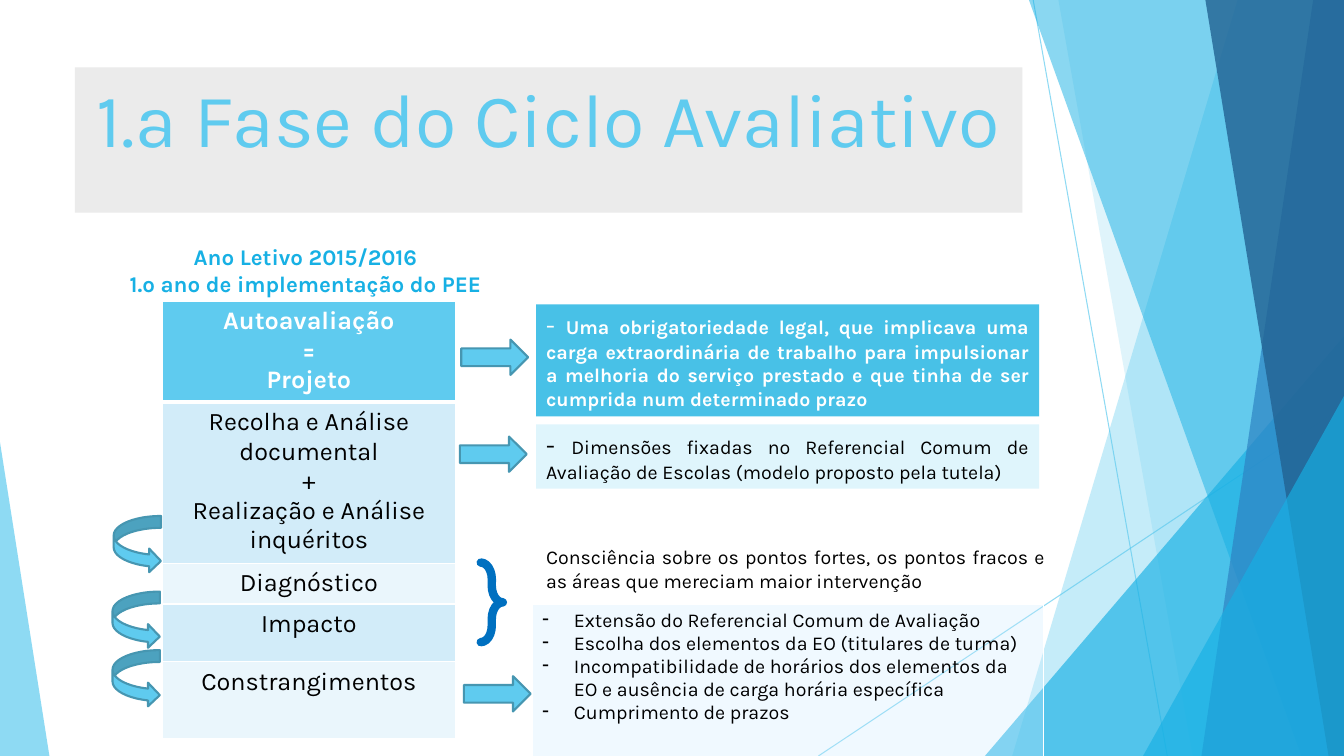
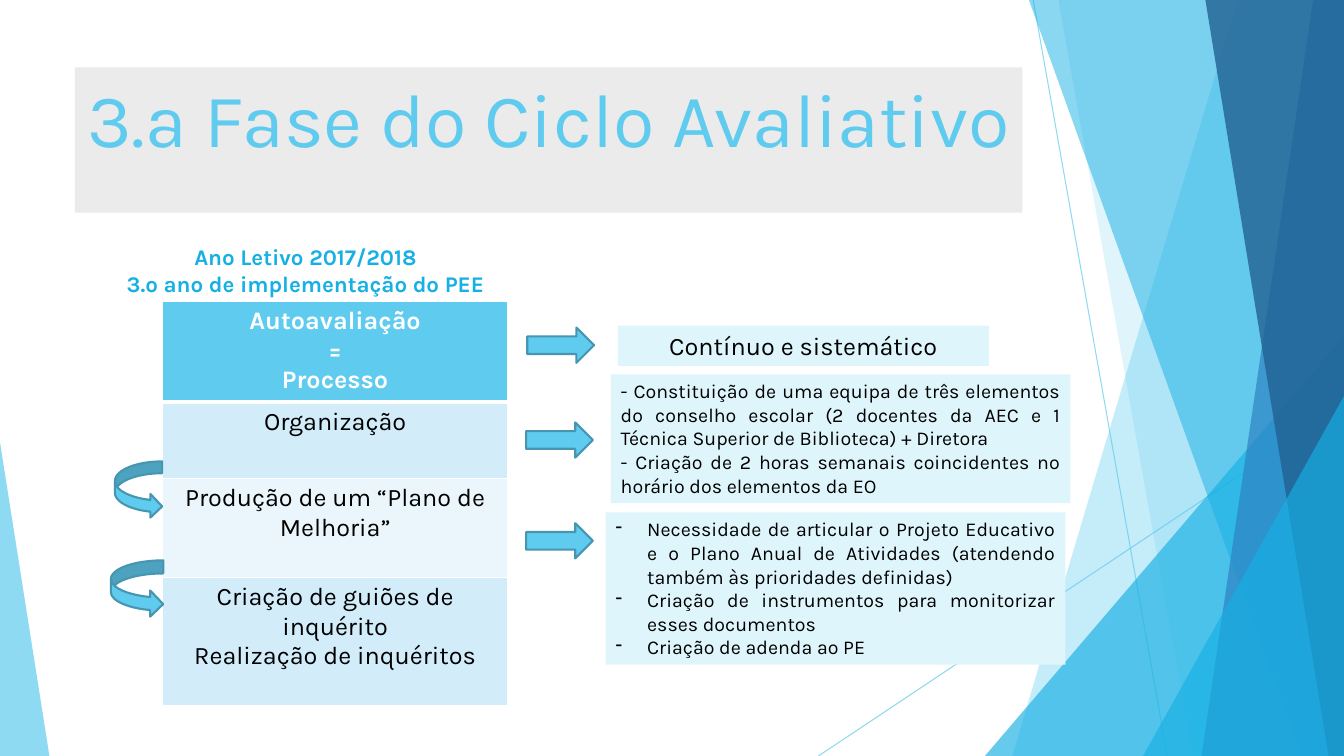
"""Build two slides on the phases of a school evaluation cycle."""
from lxml import etree
from pptx import Presentation
from pptx.dml.color import RGBColor
from pptx.enum.shapes import MSO_CONNECTOR, MSO_SHAPE
from pptx.enum.text import MSO_ANCHOR, PP_ALIGN
from pptx.oxml.ns import qn
from pptx.util import Pt

RECT, TRI = MSO_SHAPE.RECTANGLE, MSO_SHAPE.ISOSCELES_TRIANGLE
ARROW, CURVE = MSO_SHAPE.RIGHT_ARROW, MSO_SHAPE.CURVED_RIGHT_ARROW
BRACE, LINE = MSO_SHAPE.RIGHT_BRACE, MSO_CONNECTOR.STRAIGHT
LEFT, MID, FULL = PP_ALIGN.LEFT, PP_ALIGN.CENTER, PP_ALIGN.JUSTIFY
TOP, LOW = MSO_ANCHOR.TOP, MSO_ANCHOR.BOTTOM

FONT = "Karla"
WIDE, HIGH = 960, 540
SKY, BLUE, EDGE = "5FCBEF", "17B0E4", "4696B1"
PALE, GRAY, WHITE, BLACK = "DFF5FC", "EBEBEB", "FFFFFF", "000000"
BANDS = ["D2ECF9", "EAF6FC"]
INDENT = 22.5

RAYS = [(738, 0, 833.8, HIGH), (WIDE, 290, 584.6, HIGH)]
SHARDS = [
    ("quad", (884, 723), SKY, 36),
    ("quad", (756, 852), SKY, 20),
    ("tri", (703.5, 240, 1), BLUE, 66),
    ("quad", (735, 929.5), BLUE, 50),
    ("quad", (938, 858.2), "2E83C3", 70),
    ("quad", (861, 949), "226292", 80),
    ("tri", (816.5, 283, 1), BLUE, 66),
    ("tri", (35.3, 316, 0), SKY, 70),
]

SLIDES = [
    {
        "title": "1.ª Fase do Ciclo Avaliativo",
        "year": ["Ano Letivo 2015/2016", "1.º ano de implementação do PEE"],
        "wide": 209.5,
        "steps": [
            (70, ["Autoavaliação", "=", "Projeto"]),
            (113, ["Recolha e Análise documental", "+",
                   "Realização e Análise inquéritos"]),
            (28.8, ["Diagnóstico"]),
            (41.4, ["Impacto"]),
            (55, ["Constrangimentos"]),
        ],
        "limits": [
            "Extensão do Referencial Comum de Avaliação",
            "Escolha dos elementos da EO (titulares de turma)",
            "Incompatibilidade de horários dos elementos da EO e ausência "
            "de carga horária específica",
            "Cumprimento de prazos",
        ],
        "curves": [(81.2, 368.6, 33.8), (80.4, 422.6, 33.8),
                   (80.4, 464.4, 33.8)],
        "arrows": [(329.5, 242.6), (328.5, 311.8), (331.3, 483)],
        "brace": (343.4, 401.8, 15.8, 56.9),
        "boxes": [
            {"at": (383, 217.4, 359.3, 80), "fill": "15B0E1", "clear": 78,
             "ink": WHITE, "bold": True, "lead": "- ",
             "text": ["Uma obrigatoriedade legal, que implicava uma carga "
                      "extraordinária de trabalho para impulsionar a melhoria "
                      "do serviço prestado e que tinha de ser cumprida num "
                      "determinado prazo"]},
            {"at": (383, 303.1, 359.3, 46), "fill": PALE, "lead": "- ",
             "text": ["Dimensões fixadas no Referencial Comum de Avaliação "
                      "de Escolas (modelo proposto pela tutela)"]},
            {"at": (383, 386, 370.8, 63.4),
             "text": ["Consciência sobre os pontos fortes, os pontos fracos "
                      "e as áreas que mereciam maior intervenção"]},
        ],
    },
    {
        "title": "3.ª Fase do Ciclo Avaliativo",
        "year": ["Ano Letivo 2017/2018", "3.º ano de implementação do PEE"],
        "wide": 247,
        "steps": [
            (70, ["Autoavaliação", "=", "Processo"]),
            (54.3, ["Organização"]),
            (70.7, ["Produção de um “Plano de Melhoria”"]),
            (91.4, ["Criação de guiões de inquérito",
                    "Realização de inquéritos"]),
        ],
        "curves": [(82.1, 329.6, 33.8), (79.2, 400.3, 37.4)],
        "arrows": [(376.6, 234), (375.8, 301.7), (375.8, 373.7)],
        "boxes": [
            {"at": (441.3, 232.6, 265, 28.8), "fill": PALE, "size": 18,
             "align": MID, "text": ["Contínuo e sistemático"]},
            {"at": (436.3, 267.4, 328.3, 92), "fill": PALE,
             "text": ["- Constituição de uma equipa de três elementos do "
                      "conselho escolar (2 docentes da AEC e 1 Técnica "
                      "Superior de Biblioteca) + Diretora",
                      "- Criação de 2 horas semanais coincidentes no horário "
                      "dos elementos da EO"]},
            {"at": (432.7, 366, 328.3, 108.7), "fill": PALE, "dash": True,
             "text": ["Necessidade de articular o Projeto Educativo e o "
                      "Plano Anual de Atividades (atendendo também às "
                      "prioridades definidas)",
                      "Criação de instrumentos para monitorizar esses "
                      "documentos",
                      "Criação de adenda ao PE"]},
        ],
    },
]


def pts(nums):
    """Turn numbers into lengths."""
    return [Pt(n) for n in nums]


def rgb(code):
    """Turn a hex string into a colour."""
    return RGBColor.from_string(code)


def fade(host, clear):
    """Set the opacity of the solid fill in an XML element."""
    tone = host.find(qn("a:solidFill"))[0]
    etree.SubElement(tone, qn("a:alpha"), val=str(clear * 1000))


def paint(shape, fill=None, clear=None, edge=None, thick=1.5):
    """Set fill, opacity and outline, and drop the shadow."""
    shape.shadow.inherit = False
    if fill:
        shape.fill.solid()
        shape.fill.fore_color.rgb = rgb(fill)
    else:
        shape.fill.background()
    if clear:
        fade(shape.element.spPr, clear)
    if edge:
        shape.line.color.rgb = rgb(edge)
        shape.line.width = Pt(thick)
    else:
        shape.line.fill.background()
    return shape


def draw(slide, kind, at, **look):
    """Add a painted preset shape."""
    return paint(slide.shapes.add_shape(kind, *pts(at)), **look)


def write(frame, text, size=14, ink=BLACK, bold=False, align=FULL,
          lead=None, dash=False):
    """Fill a text frame with formatted paragraphs."""
    frame.word_wrap = True
    for num, line in enumerate(text):
        para = frame.add_paragraph() if num else frame.paragraphs[0]
        para.text = lead or line
        para.alignment = align
        if lead:
            para.add_run().text = line
        for run in para.runs:
            run.font.name = FONT
            run.font.size = Pt(size)
            run.font.bold = bold
            run.font.color.rgb = rgb(ink)
        if lead:
            para.runs[0].font.size = Pt(18)
            para.runs[0].font.bold = False
        if dash:
            props = para.runs[0].font and para._p.get_or_add_pPr()
            props.set("marL", str(Pt(INDENT)))
            props.set("indent", str(-Pt(INDENT)))
            etree.SubElement(props, qn("a:buChar"), char="-")


def label(slide, at, fill=None, clear=None, anchor=TOP, **style):
    """Add a box with text, with or without a fill."""
    if fill:
        box = draw(slide, RECT, at, fill=fill, clear=clear)
    else:
        box = slide.shapes.add_textbox(*pts(at))
    box.text_frame.vertical_anchor = anchor
    write(box.text_frame, **style)


def tint(cell, fill, clear=None, base=1):
    """Give a cell white borders and a fill."""
    props = cell._tc.get_or_add_tcPr()
    for side in "LRTB":
        thick = base if side == "B" else 1
        edge = etree.SubElement(props, qn("a:ln" + side), w=str(Pt(thick)))
        solid = etree.SubElement(edge, qn("a:solidFill"))
        etree.SubElement(solid, qn("a:srgbClr"), val=WHITE)
    cell.fill.solid()
    cell.fill.fore_color.rgb = rgb(fill)
    if clear:
        fade(props, clear)


def column(slide, left, top, wide, highs):
    """Add a table of one column and return its cells."""
    grid = slide.shapes.add_table(
        len(highs), 1, *pts((left, top, wide, sum(highs)))).table
    grid.first_row = grid.horz_banding = False
    for row, high in zip(grid.rows, highs):
        row.height = Pt(high)
    return list(grid.iter_cells())


def steps(slide, wide, rows):
    """Add the table of steps with its header."""
    cells = column(slide, 115.9, 215.3, wide, [high for high, text in rows])
    for num, (cell, (high, text)) in enumerate(zip(cells, rows)):
        head = num == 0
        tint(cell, SKY if head else BANDS[(num - 1) % 2],
             base=3 if head else 1)
        write(cell.text_frame, text, size=18, bold=head, align=MID,
              ink=WHITE if head else BLACK)


def limits(slide, text):
    """Add the table that lists the constraints."""
    blank, body = column(slide, 380.2, 403.2, 365, [28.4, 108.4])
    tint(blank, WHITE)
    tint(body, "CCECFF", 29)
    write(body.text_frame, text, align=LEFT, dash=True)


def shards(slide):
    """Draw the faceted backdrop and return its shapes."""
    parts = []
    for ray in RAYS:
        line = slide.shapes.add_connector(LINE, *pts(ray))
        line.line.color.rgb = rgb(SKY)
        line.line.width = Pt(0.75)
        props = line.element.spPr
        fade(props.find(qn("a:ln")), 70)
        etree.SubElement(props, qn("a:effectLst"))
        parts.append(line)
    for kind, spot, fill, clear in SHARDS:
        if kind == "quad":
            top, low = spot
            path = slide.shapes.build_freeform(Pt(top), 0)
            path.add_line_segments([pts(p) for p in (
                (WIDE, 0), (WIDE, HIGH), (low, HIGH))])
            part = paint(path.convert_to_shape(), fill, clear)
        else:
            side, top, tip = spot
            left, wide = (side, WIDE - side) if tip else (0, side)
            part = draw(slide, TRI, (left, top, wide, HIGH - top),
                        fill=fill, clear=clear)
            part.adjustments[0] = tip
        parts.append(part)
    return parts


def build(slide, data):
    """Lay out the content of one slide."""
    label(slide, (53.5, 48.2, 676.8, 103.7), fill=GRAY, text=[data["title"]],
          size=54, ink=SKY, align=MID)
    label(slide, (53.3, 170, 329.8, 45.4), anchor=LOW, text=data["year"],
          size=16, ink=BLUE, bold=True, align=MID)
    steps(slide, data["wide"], data["steps"])
    if "limits" in data:
        limits(slide, data["limits"])
    for left, top, wide in data["curves"]:
        draw(slide, CURVE, (left, top, wide, 40.6), fill=SKY, edge=EDGE)
    for left, top in data["arrows"]:
        draw(slide, ARROW, (left, top, 47.7, 25.2), fill=SKY, edge=EDGE)
    for box in data["boxes"]:
        label(slide, **box)
    if "brace" in data:
        brace = draw(slide, BRACE, data["brace"], edge="0070C0", thick=6)
        brace.adjustments[0] = 0.75
        brace.element.spPr.find(qn("a:ln")).set("cap", "rnd")


def main():
    """Create the deck and save it."""
    deck = Presentation()
    deck.slide_width, deck.slide_height = pts((WIDE, HIGH))
    blank = deck.slide_layouts[6]
    tree = blank.shapes.element
    for spare in list(blank.placeholders):
        tree.remove(spare.element)
    pages = [deck.slides.add_slide(blank) for data in SLIDES]
    for part in shards(pages[0]):
        tree.append(part.element)
    for page, data in zip(pages, SLIDES):
        build(page, data)
    deck.save("out.pptx")


if __name__ == "__main__":
    main()
